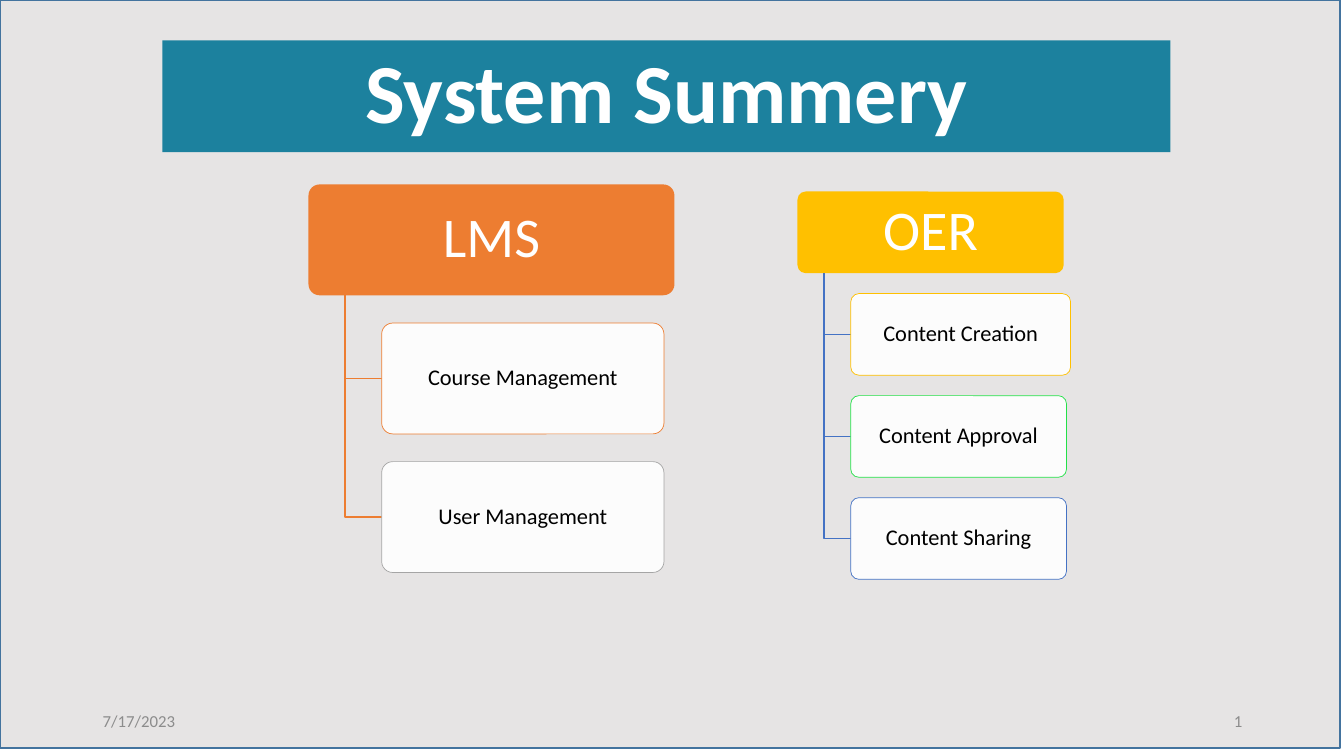
"""Build the System Summery slide with its two module trees."""
from dataclasses import dataclass

from lxml.etree import SubElement
from pptx import Presentation
from pptx.dml.color import RGBColor
from pptx.enum.shapes import MSO_SHAPE as Preset
from pptx.enum.text import MSO_ANCHOR as Anchor, PP_ALIGN as Align
from pptx.oxml.ns import qn
from pptx.shapes.autoshape import Shape
from pptx.slide import Slide
from pptx.util import Inches, Pt

COLORS = {
    "backdrop": "AFABAB", "frame": "43739E", "teal": "1C819E",
    "orange": "ED7D31", "gold": "FFC000", "gray": "A5A5A5",
    "green": "23E148", "blue": "4472C4", "footer": "8C8C8C",
    "white": "FFFFFF", "black": "000000",
}
FONT = "Calibri"
ROW_PITCH = 1.25
TRUNK_INSET = 0.1
CHILD_INSET = 0.2


@dataclass(frozen=True)
class Box:
    left: float
    top: float
    width: float
    height: float


@dataclass(frozen=True)
class Child:
    text: str
    width: float
    outline: str


@dataclass(frozen=True)
class Tree:
    text: str
    header: Box
    fill: str
    branch: str
    children: tuple[Child, ...]


@dataclass(frozen=True)
class Footer:
    text: str
    left: float
    align: Align


TREES = (
    Tree("LMS", Box(3.06, 1.83, 3.63, 1.1), "orange", "orange", (
        Child("Course Management", 2.8, "orange"),
        Child("User Management", 2.8, "gray"),
    )),
    Tree("OER", Box(7.91, 1.9, 2.64, 0.81), "gold", "blue", (
        Child("Content Creation", 2.18, "gold"),
        Child("Content Approval", 2.14, "green"),
        Child("Content Sharing", 2.14, "blue"),
    )),
)
FOOTERS = (Footer("7/17/2023", 0.92, Align.LEFT), Footer("1", 9.42, Align.RIGHT))


def color(name: str) -> RGBColor:
    return RGBColor.from_string(COLORS[name])


def set_outline(shape: Shape, name: str | None, width: float) -> None:
    if name is None:
        shape.line.fill.background()
    else:
        shape.line.color.rgb = color(name)
        shape.line.width = Pt(width)


def add_box(slide: Slide, preset: Preset, box: Box, fill: str, opacity: int = 100,
            outline: str | None = None, line_width: float = 1) -> Shape:
    shape = slide.shapes.add_shape(preset, Inches(box.left), Inches(box.top),
                                   Inches(box.width), Inches(box.height))
    shape.shadow.inherit = False
    shape.fill.solid()
    shape.fill.fore_color.rgb = color(fill)
    if opacity < 100:
        solid = shape._element.spPr.find(qn("a:solidFill"))
        SubElement(solid[0], qn("a:alpha"), val=str(opacity * 1000))
    set_outline(shape, outline, line_width)
    if preset == Preset.ROUNDED_RECTANGLE:
        shape.adjustments[0] = 0.1
    return shape


def write(shape: Shape, text: str, size: int, name: str, align: Align = Align.CENTER,
          bold: bool = False, spacing: float = 0.9) -> None:
    frame = shape.text_frame
    frame.word_wrap = True
    frame.vertical_anchor = Anchor.MIDDLE
    paragraph = frame.paragraphs[0]
    paragraph.text = text
    paragraph.alignment = align
    paragraph.line_spacing = spacing
    paragraph.font.name = FONT
    paragraph.font.size = Pt(size)
    paragraph.font.bold = bold
    paragraph.font.color.rgb = color(name)


def set_margins(shape: Shape, side: float, end: float) -> None:
    frame = shape.text_frame
    frame.margin_left = frame.margin_right = Inches(side)
    frame.margin_top = frame.margin_bottom = Inches(end)


def add_branch(slide: Slide, start: tuple[float, float], end: tuple[float, float],
               name: str) -> None:
    builder = slide.shapes.build_freeform(Inches(start[0]), Inches(start[1]))
    corner = (start[0], end[1])
    builder.add_line_segments([(Inches(x), Inches(y)) for x, y in (corner, end)],
                              close=False)
    branch = builder.convert_to_shape()
    branch.shadow.inherit = False
    branch.fill.background()
    set_outline(branch, name, 1)


def add_tree(slide: Slide, tree: Tree) -> None:
    header = tree.header
    heading = add_box(slide, Preset.ROUNDED_RECTANGLE, header, tree.fill)
    set_margins(heading, 0.08, 0.06)
    write(heading, tree.text, 40, "white")
    trunk = (header.left + TRUNK_INSET * header.width, header.top + header.height)
    left = header.left + CHILD_INSET * header.width
    for row, child in enumerate(tree.children, start=1):
        top = header.top + row * ROW_PITCH * header.height
        add_branch(slide, trunk, (left, top + header.height / 2), tree.branch)
        card = add_box(slide, Preset.ROUNDED_RECTANGLE,
                       Box(left, top, child.width, header.height),
                       "white", 90, child.outline, 0.5)
        set_margins(card, 0.03, 0.02)
        write(card, child.text, 16, "black")


def add_footer(slide: Slide, footer: Footer) -> None:
    shape = slide.shapes.add_textbox(Inches(footer.left), Inches(6.95),
                                     Inches(3), Inches(0.4))
    write(shape, footer.text, 12, "footer", footer.align, spacing=1.0)


def main() -> None:
    presentation = Presentation()
    presentation.slide_width = Inches(13.33)
    presentation.slide_height = Inches(7.5)
    slide = presentation.slides.add_slide(presentation.slide_layouts[6])
    add_box(slide, Preset.FLOWCHART_PROCESS, Box(0, 0, 13.29, 7.42),
            "backdrop", 31, "frame")
    title = add_box(slide, Preset.RECTANGLE, Box(1.61, 0.4, 10, 1.11), "teal")
    write(title, "System Summery", 60, "white", bold=True)
    for tree in TREES:
        add_tree(slide, tree)
    for footer in FOOTERS:
        add_footer(slide, footer)
    presentation.save("out.pptx")


if __name__ == "__main__":
    main()
